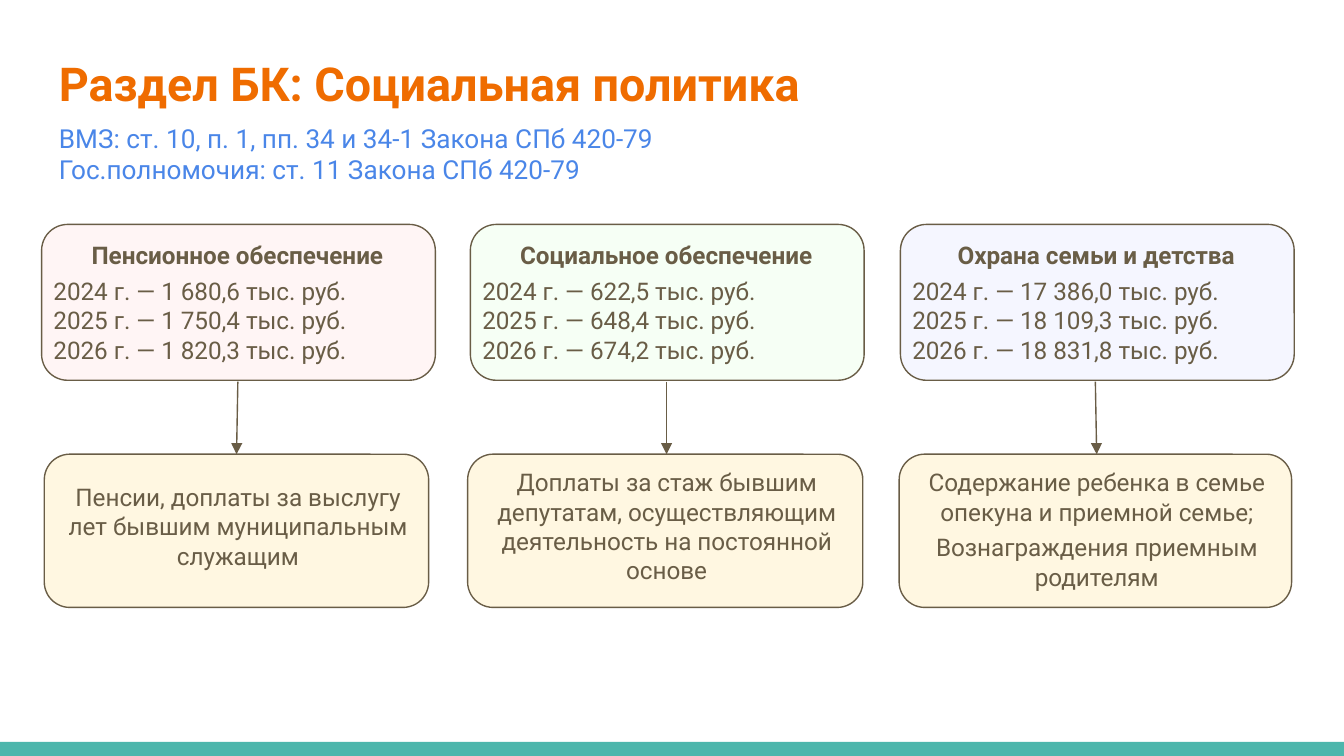
from dataclasses import dataclass

from lxml.etree import SubElement
from pptx import Presentation
from pptx.dml.color import RGBColor
from pptx.enum.shapes import MSO_CONNECTOR as Connector, MSO_SHAPE as Shape
from pptx.enum.text import MSO_ANCHOR as Anchor, PP_ALIGN as Align
from pptx.oxml.ns import qn
from pptx.util import Inches, Pt


@dataclass(frozen=True)
class Theme:
    font: str = "Roboto"
    ink: str = "695D46"
    heading: str = "EF6C00"
    reference: str = "4A86E8"
    footer: str = "4DB6AC"
    purpose_fill: str = "FFF7E1"
    heading_size: float = 25
    reference_size: float = 14
    body_size: float = 13
    line_width: float = 0.75
    gap: float = 3.6


@dataclass(frozen=True)
class Direction:
    """One column: yearly budget above, what it pays for below."""
    name: str
    amounts: tuple
    purposes: tuple
    fill: str
    budget_left: float
    purpose_left: float
    purpose_width: float
    purpose_text_top: float
    arrow_x: tuple


DIRECTIONS = (
    Direction("Пенсионное обеспечение", ("1 680,6", "1 750,4", "1 820,3"),
              ("Пенсии, доплаты за выслугу лет бывшим муниципальным служащим",),
              "FFF5F5", 0.31, 0.33, 2.86, 3.49, (1.77, 1.76)),
    Direction("Социальное обеспечение", ("622,5", "648,4", "674,2"),
              ("Доплаты за стаж бывшим депутатам, осуществляющим "
               "деятельность на постоянной основе",),
              "F6FFF5", 3.5, 3.48, 2.94, 3.38, (4.96, 4.96)),
    Direction("Охрана семьи и детства", ("17 386,0", "18 109,3", "18 831,8"),
              ("Содержание ребенка в семье опекуна и приемной семье;",
               "Вознаграждения приемным родителям"),
              "F5F6FF", 6.7, 6.69, 2.92, 3.38, (8.15, 8.16)),
)
FIRST_YEAR = 2024
SLIDE_WIDTH = Inches(10)
SLIDE_HEIGHT = SLIDE_WIDTH * 9 // 16
BUDGET_TOP, BUDGET_WIDTH, BUDGET_HEIGHT = 1.67, 2.93, 1.16
PURPOSE_TOP, PURPOSE_HEIGHT = 3.38, 1.14
ARROW_TOP = 2.84


class SlideBuilder:
    def __init__(self, slide, theme):
        self.slide = slide
        self.theme = theme

    def block(self, kind, left, top, width, height, fill, outlined=True):
        block = self.slide.shapes.add_shape(
            kind, Inches(left), Inches(top), Inches(width), Inches(height))
        block.shadow.inherit = False
        block.fill.solid()
        block.fill.fore_color.rgb = RGBColor.from_string(fill)
        if outlined:
            block.line.color.rgb = RGBColor.from_string(self.theme.ink)
            block.line.width = Pt(self.theme.line_width)
        else:
            block.line.fill.background()

    def text(self, left, top, width, height, lines, size, color,
             align=Align.LEFT, bold=False):
        """Add a text box and return its paragraphs."""
        frame = self.slide.shapes.add_textbox(
            Inches(left), Inches(top), Inches(width), Inches(height)).text_frame
        frame.word_wrap = True
        frame.vertical_anchor = Anchor.TOP
        frame.margin_left = frame.margin_right = Inches(0.1)
        frame.margin_top = frame.margin_bottom = Inches(0.1)
        frame.text = "\n".join(lines)
        for paragraph in frame.paragraphs:
            paragraph.alignment = align
            paragraph.font.name = self.theme.font
            paragraph.font.size = Pt(size)
            paragraph.font.bold = bold
            paragraph.font.color.rgb = RGBColor.from_string(color)
        return frame.paragraphs

    def arrow(self, start_x, start_y, end_x, end_y):
        arrow = self.slide.shapes.add_connector(
            Connector.STRAIGHT, Inches(start_x), Inches(start_y),
            Inches(end_x), Inches(end_y))
        arrow.line.color.rgb = RGBColor.from_string(self.theme.ink)
        arrow.line.width = Pt(self.theme.line_width)
        SubElement(arrow.line._get_or_add_ln(), qn("a:tailEnd"), type="triangle")
        SubElement(arrow._element.spPr, qn("a:effectLst"))

    def direction(self, item):
        theme = self.theme
        self.block(Shape.ROUNDED_RECTANGLE, item.budget_left, BUDGET_TOP,
                   BUDGET_WIDTH, BUDGET_HEIGHT, item.fill)
        years = [f"{year} г. — {amount} тыс. руб."
                 for year, amount in enumerate(item.amounts, FIRST_YEAR)]
        name, first_year, *_ = self.text(
            item.budget_left - 0.01, BUDGET_TOP + 0.02, BUDGET_WIDTH, 1.14,
            [item.name, *years], theme.body_size, theme.ink)
        name.alignment = Align.CENTER
        name.font.bold = True
        first_year.space_before = Pt(theme.gap)

        self.block(Shape.ROUNDED_RECTANGLE, item.purpose_left, PURPOSE_TOP,
                   item.purpose_width, PURPOSE_HEIGHT, theme.purpose_fill)
        purposes = self.text(
            item.purpose_left + 0.01, item.purpose_text_top, item.purpose_width,
            PURPOSE_TOP + PURPOSE_HEIGHT - item.purpose_text_top,
            item.purposes, theme.body_size, theme.ink, Align.CENTER)
        for purpose in purposes[1:]:
            purpose.space_before = Pt(theme.gap)

        start_x, end_x = item.arrow_x
        self.arrow(start_x, ARROW_TOP, end_x, PURPOSE_TOP)


def main():
    deck = Presentation()
    deck.slide_width, deck.slide_height = SLIDE_WIDTH, SLIDE_HEIGHT
    theme = Theme()
    builder = SlideBuilder(deck.slides.add_slide(deck.slide_layouts[6]), theme)

    builder.block(Shape.RECTANGLE, 0, 5.52, 10, 0.11, theme.footer, outlined=False)
    builder.text(0.34, 0.31, 9.32, 0.5, ["Раздел БК: Социальная политика"],
                 theme.heading_size, theme.heading, bold=True)
    builder.text(0.34, 0.81, 9.45, 0.66,
                 ["ВМЗ: ст. 10, п. 1, пп. 34 и 34-1 Закона СПб 420-79\v"
                  "Гос.полномочия: ст. 11 Закона СПб 420-79"],
                 theme.reference_size, theme.reference)
    for item in DIRECTIONS:
        builder.direction(item)
    deck.save("out.pptx")


if __name__ == "__main__":
    main()
